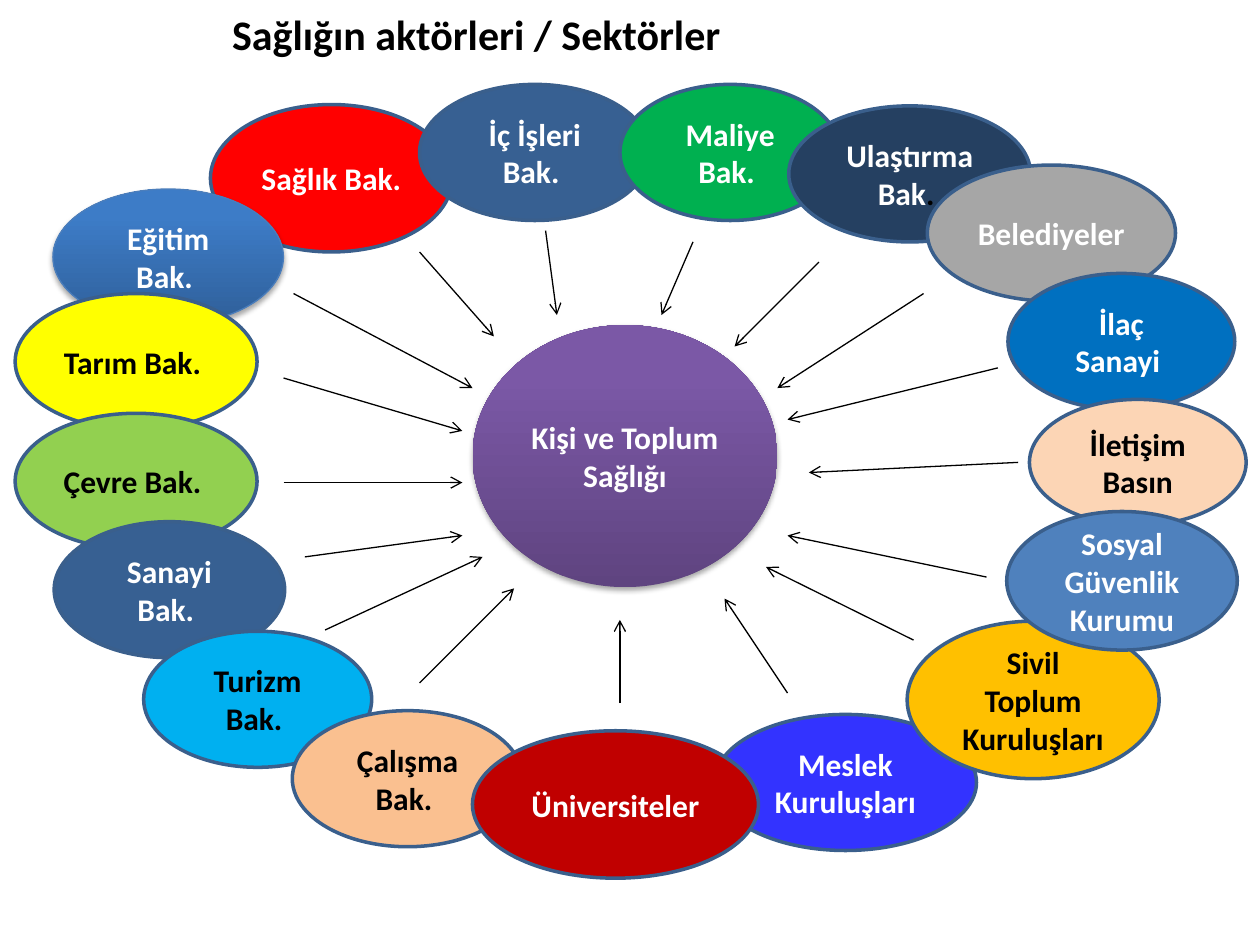
from lxml.etree import SubElement
from pptx import Presentation
from pptx.dml.color import RGBColor
from pptx.enum.shapes import MSO_CONNECTOR, MSO_SHAPE
from pptx.enum.text import MSO_ANCHOR, PP_ALIGN
from pptx.oxml.ns import qn
from pptx.util import Inches, Pt

WHITE, BLACK, OUTLINE = "FFFFFF", "000000", "3A5F8C"

# Content: text, (left, top, width, height), fill (a pair is a gradient), text colour
ACTORS = [
    ("Sağlık Bak. ", (1.67, 0.83, 1.92, 1.17), "FF0000", WHITE),
    ("Eğitim Bak. ", (0.42, 1.5, 1.83, 1.08), ("2F5F99", "3D7CC7"), WHITE),
    ("Tarım Bak. ", (0.12, 2.33, 1.92, 1.08), "FFFF00", BLACK),
    ("Çevre Bak. ", (0.12, 3.28, 1.92, 1.08), "92D050", BLACK),
    ("Sanayi Bak. ", (0.43, 4.14, 1.83, 1.08), "376092", WHITE),
    ("Turizm Bak. ", (1.14, 5.01, 1.81, 1.08), "00B0F0", BLACK),
    ("İç İşleri Bak. ", (3.33, 0.67, 1.83, 1.08), "376092", WHITE),
    ("Maliye Bak. ", (4.92, 0.67, 1.75, 1.08), "00B050", WHITE),
    ("Ulaştırma Bak", (6.26, 0.84, 1.92, 1.08), "254061", WHITE),
    ("Çalışma Bak. ", (2.32, 5.64, 1.83, 1.08), "FAC090", BLACK),
    ("Belediyeler", (7.36, 1.31, 1.97, 1.08), "A6A6A6", WHITE),
    ("İlaç Sanayi ", (8, 2.17, 1.8, 1.08), "0070C0", WHITE),
    ("Meslek Kuruluşları", (5.67, 5.67, 2.08, 1.08), "3333FF", WHITE),
    ("Sivil Toplum Kuruluşları", (7.2, 4.93, 2, 1.25), "FFC000", BLACK),
    ("Kişi ve Toplum Sağlığı", (3.75, 2.58, 2.42, 2.08), ("5F4480", "7B58A6"), WHITE),
    ("Üniversiteler", (3.75, 5.8, 2.27, 1.17), "C00000", WHITE),
    ("İletişim Basın", (8.17, 3.17, 1.72, 1), "FCD5B5", BLACK),
    ("Sosyal Güvenlik Kurumu", (7.99, 4.06, 1.83, 1.1), "4F81BD", WHITE),
]
GRADIENT_LINES = {"Eğitim Bak. ": "4B7EBC"}

# Arrows towards the centre: x1, y1, x2, y2
ARROWS = [
    (4.33, 1.83, 4.42, 2.5), (5.5, 1.92, 5.25, 2.5), (6.5, 2.08, 5.83, 2.75),
    (2.25, 3, 3.67, 3.42), (2.42, 4.42, 3.67, 4.25), (4.92, 5.58, 4.92, 4.92),
    (6.25, 5.5, 5.75, 4.75), (7.25, 5.08, 6.08, 4.5), (7.33, 2.33, 6.17, 3.08),
    (7.92, 2.92, 6.25, 3.33), (7.83, 4.58, 6.25, 4.25), (2.33, 2.33, 3.75, 3.08),
    (3.33, 2, 3.92, 2.67), (2.25, 3.83, 3.67, 3.83), (8.08, 3.67, 6.42, 3.75),
    (2.58, 5, 3.83, 4.42), (3.33, 5.42, 4.08, 4.67),
]


def rgb(value):
    return RGBColor.from_string(value)


def add_text(sp, text, size=18, color=BLACK):
    tf = sp.text_frame
    tf.word_wrap = True
    tf.vertical_anchor = MSO_ANCHOR.MIDDLE
    p = tf.paragraphs[0]
    p.alignment = PP_ALIGN.CENTER
    r = p.add_run()
    r.text = text
    r.font.name, r.font.size, r.font.bold = "Calibri", Pt(size), True
    r.font.color.rgb = rgb(color)


def set_line(line, color, width):
    line.color.rgb = rgb(color)
    line.width = Pt(width)


def add_gradient(fill, dark, light):
    fill.gradient()
    fill.gradient_angle = 90
    for stop, color, position in zip(fill.gradient_stops, (dark, light), (0, 0.8)):
        stop.color.rgb = rgb(color)
        stop.position = position


def add_shadow(sp):
    effects = sp._element.spPr.find(qn("a:effectLst"))
    shadow = SubElement(effects, qn("a:outerShdw"), blurRad=str(Pt(3.1)),
                        dist=str(Pt(1.8)), dir="5400000", rotWithShape="0")
    color = SubElement(shadow, qn("a:srgbClr"), val=BLACK)
    SubElement(color, qn("a:alpha"), val="35000")


def add_actor(s, text, box, fill, color):
    sp = s.shapes.add_shape(MSO_SHAPE.OVAL, *map(Inches, box))
    sp.shadow.inherit = False
    if isinstance(fill, tuple):
        add_gradient(sp.fill, *fill)
        add_shadow(sp)
        if text in GRADIENT_LINES:
            set_line(sp.line, GRADIENT_LINES[text], 0.75)
        else:
            sp.line.fill.background()
    else:
        sp.fill.solid()
        sp.fill.fore_color.rgb = rgb(fill)
        set_line(sp.line, OUTLINE, 2)
    add_text(sp, text, color=color)
    return sp


def add_arrow(s, ends):
    cx = s.shapes.add_connector(MSO_CONNECTOR.STRAIGHT, *map(Inches, ends))
    set_line(cx.line, BLACK, 0.75)
    SubElement(cx.line._get_or_add_ln(), qn("a:tailEnd"), type="arrow")
    SubElement(cx._element.spPr, qn("a:effectLst"))


def main():
    prs = Presentation()
    prs.slide_width, prs.slide_height = Inches(10), Inches(7.5)
    s = prs.slides.add_slide(prs.slide_layouts[5])

    # Title
    title = s.shapes.title
    title.left, title.top, title.width, title.height = map(Inches, (0.25, -0.36, 7.08, 1.25))
    add_text(title, " ")
    add_text(title, "Sağlığın aktörleri / Sektörler ", size=24)

    # Ring of actors around the centre
    for text, box, fill, color in ACTORS:
        sp = add_actor(s, text, box, fill, color)
        if text == "Ulaştırma Bak":
            add_text(sp, ". ", color=BLACK)

    # Arrows
    for ends in ARROWS:
        add_arrow(s, ends)

    prs.save("out.pptx")


if __name__ == "__main__":
    main()
